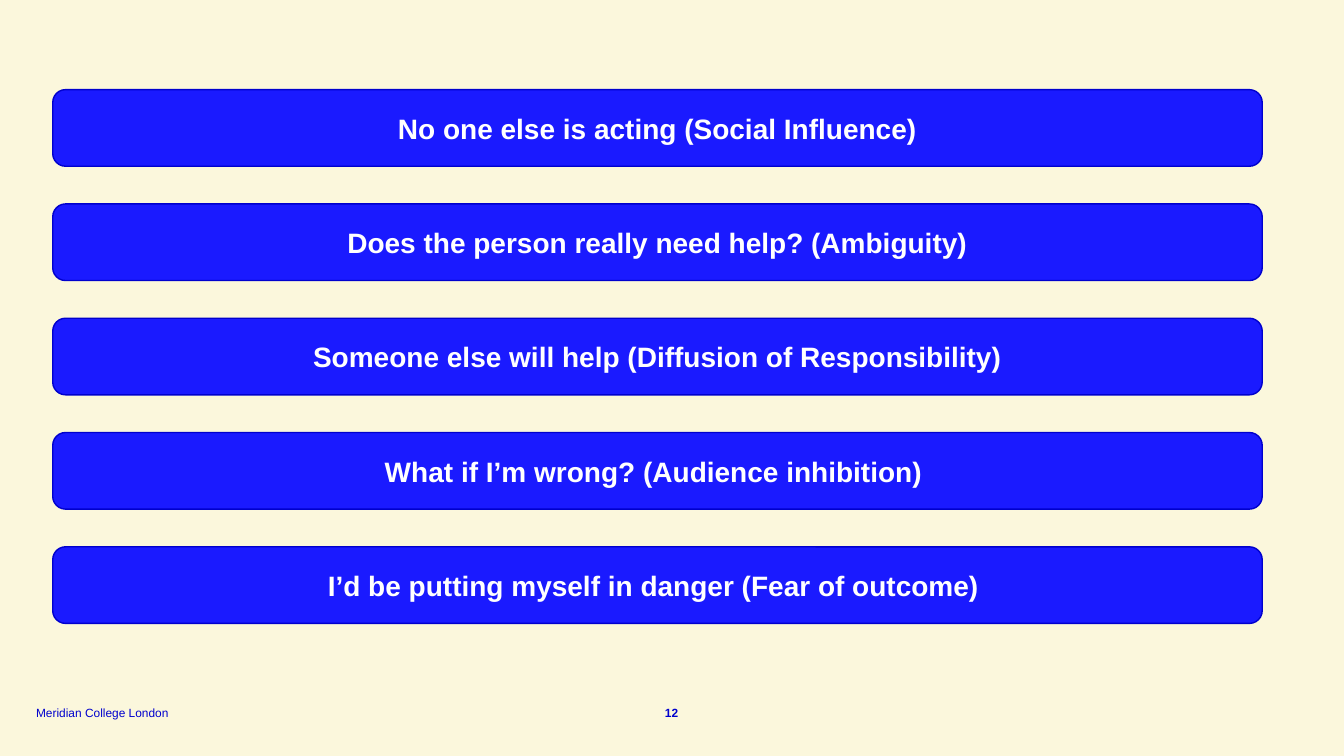
"""Build a slide listing five reasons why bystanders do not help."""
from pptx import Presentation
from pptx.dml.color import RGBColor
from pptx.enum.shapes import MSO_SHAPE
from pptx.enum.text import MSO_ANCHOR, PP_ALIGN
from pptx.util import Cm, Pt

CREAM = RGBColor(0xFB, 0xF7, 0xDC)
BRIGHT_BLUE = RGBColor(0x1A, 0x1A, 0xFF)
DARK_BLUE = RGBColor(0x00, 0x00, 0xCD)
WHITE = RGBColor(0xFF, 0xFF, 0xFF)

REASONS = [
    "No one else is acting (Social Influence)",
    "Does the person really need help? (Ambiguity)",
    "Someone else will help (Diffusion of Responsibility)",
    "What if I’m wrong? (Audience inhibition) ",
    "I’d be putting myself in danger (Fear of outcome) ",
]
BAR_LEFT, BAR_TOP, BAR_WIDTH, BAR_HEIGHT = 1.33, 2.26, 30.48, 1.93
BAR_PITCH = 2.88

FOOTERS = [
    ("Meridian College London", 0.91, 3.94, PP_ALIGN.LEFT, False),
    ("12", 16.48, 0.89, PP_ALIGN.CENTER, True),
]


def add_text(shape, text, size, color, bold, alignment, anchor):
    """Write one run of text into a shape."""
    shape.text_frame.word_wrap = True
    shape.text_frame.vertical_anchor = anchor
    paragraph = shape.text_frame.paragraphs[0]
    paragraph.alignment = alignment
    run = paragraph.add_run()
    run.text = text
    run.font.name = "Arial"
    run.font.size = Pt(size)
    run.font.bold = bold
    run.font.color.rgb = color


presentation = Presentation()
presentation.slide_width = Cm(33.87)
presentation.slide_height = Cm(19.05)
slide = presentation.slides.add_slide(presentation.slide_layouts[6])
slide.background.fill.solid()
slide.background.fill.fore_color.rgb = CREAM

for index, reason in enumerate(REASONS):
    bar = slide.shapes.add_shape(
        MSO_SHAPE.ROUNDED_RECTANGLE,
        Cm(BAR_LEFT), Cm(BAR_TOP + index * BAR_PITCH), Cm(BAR_WIDTH), Cm(BAR_HEIGHT),
    )
    bar.shadow.inherit = False
    bar.fill.solid()
    bar.fill.fore_color.rgb = BRIGHT_BLUE
    bar.line.color.rgb = DARK_BLUE
    bar.line.width = Pt(1)
    add_text(bar, reason, 20, WHITE, True, PP_ALIGN.CENTER, MSO_ANCHOR.MIDDLE)

for text, left, width, alignment, bold in FOOTERS:
    footer = slide.shapes.add_textbox(Cm(left), Cm(17.75), Cm(width), Cm(0.38))
    frame = footer.text_frame
    frame.margin_left = frame.margin_right = frame.margin_top = frame.margin_bottom = Cm(0)
    add_text(footer, text, 8.5, DARK_BLUE, bold, alignment, MSO_ANCHOR.BOTTOM)

presentation.save("out.pptx")
